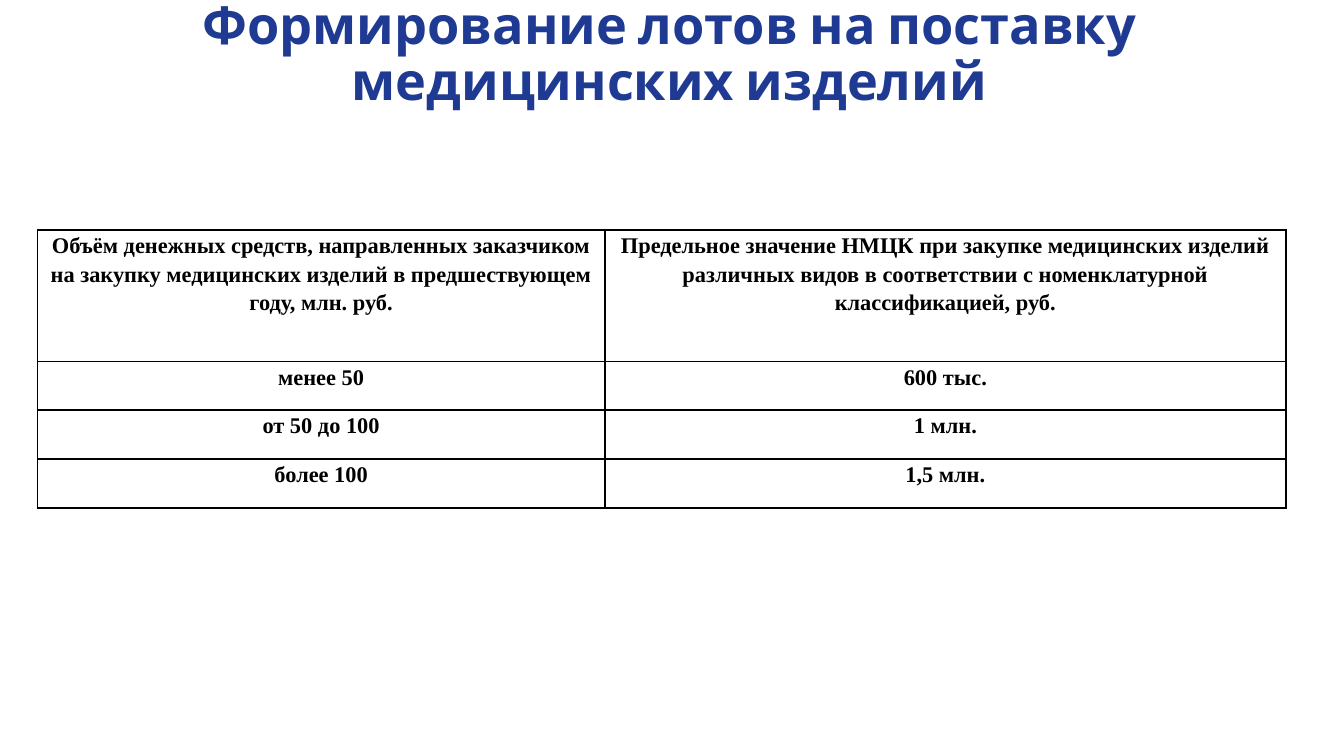
from lxml.etree import SubElement
from pptx import Presentation
from pptx.dml.color import RGBColor
from pptx.enum.text import MSO_ANCHOR, MSO_AUTO_SIZE, PP_ALIGN
from pptx.oxml.ns import qn
from pptx.util import Inches, Pt

SLIDE_WIDTH = 10
TITLE = "Формирование лотов на поставку медицинских изделий"
ROWS = [
    ("Объём денежных средств, направленных заказчиком на закупку "
     "медицинских изделий в предшествующем году, млн. руб.",
     "Предельное значение НМЦК при закупке медицинских изделий различных "
     "видов в соответствии с номенклатурной классификацией, руб."),
    ("менее 50", "600 тыс."),
    ("от 50 до 100", "1 млн."),
    ("более 100", "1,5 млн."),
]
COL_WIDTHS = [4.22, 5.07]
TABLE_HEIGHT = 2.07
HEADER_HEIGHT = 0.98


def color(value):
    """Turn a hex string into a colour."""
    return RGBColor.from_string(value)


def write(tf, text, *, size, font, fill="000000", spacing=1.0):
    """Write one centred bold paragraph into a text frame."""
    p = tf.paragraphs[0]
    p.alignment = PP_ALIGN.CENTER
    p.line_spacing = spacing
    r = p.add_run()
    r.text = text
    r.font.size = Pt(size)
    r.font.name = font
    r.font.bold = True
    r.font.color.rgb = color(fill)


def add_title(s, text):
    """Place and format the title placeholder."""
    sp = s.shapes.title
    sp.left, sp.top = Inches(0.67), Inches(0.06)
    sp.width, sp.height = Inches(8.62), Inches(0.71)
    tf = sp.text_frame
    tf.word_wrap = True
    tf.auto_size = MSO_AUTO_SIZE.NONE
    tf.vertical_anchor = MSO_ANCHOR.MIDDLE
    write(tf, text, size=28, font="Cabin", fill="1F3A93", spacing=0.9)


def set_borders(cell, value="000000", width=1):
    """Draw a solid line on all four sides of a cell."""
    tcPr = cell._tc.get_or_add_tcPr()
    for i, side in enumerate(("a:lnL", "a:lnR", "a:lnT", "a:lnB")):
        ln = tcPr.makeelement(qn(side), {"w": str(Pt(width))})
        fill = SubElement(ln, qn("a:solidFill"))
        SubElement(fill, qn("a:srgbClr"), val=value)
        tcPr.insert(i, ln)


def format_cell(cell, text):
    """Fill a cell with text, white background and borders."""
    cell.margin_left = cell.margin_right = Inches(0.07)
    cell.margin_top = cell.margin_bottom = 0
    cell.vertical_anchor = MSO_ANCHOR.TOP
    cell.fill.solid()
    cell.fill.fore_color.rgb = color("FFFFFF")
    set_borders(cell)
    write(cell.text_frame, text, size=12, font="Times New Roman", spacing=1.15)


def add_limits_table(s):
    """Add the table of purchase limits."""
    table = s.shapes.add_table(
        len(ROWS), len(COL_WIDTHS), Inches(0.28), Inches(1.71),
        Inches(sum(COL_WIDTHS)), Inches(TABLE_HEIGHT)).table
    for col, width in zip(table.columns, COL_WIDTHS):
        col.width = Inches(width)
    body_height = (TABLE_HEIGHT - HEADER_HEIGHT) / (len(ROWS) - 1)
    for i, (row, texts) in enumerate(zip(table.rows, ROWS)):
        row.height = Inches(body_height if i else HEADER_HEIGHT)
        for cell, text in zip(row.cells, texts):
            format_cell(cell, text)


def main():
    """Build the slide and save it."""
    prs = Presentation()
    prs.slide_width = Inches(SLIDE_WIDTH)
    prs.slide_height = Inches(SLIDE_WIDTH * 9 / 16)
    s = prs.slides.add_slide(prs.slide_layouts[5])
    add_title(s, TITLE)
    add_limits_table(s)
    prs.save("out.pptx")


if __name__ == "__main__":
    main()
